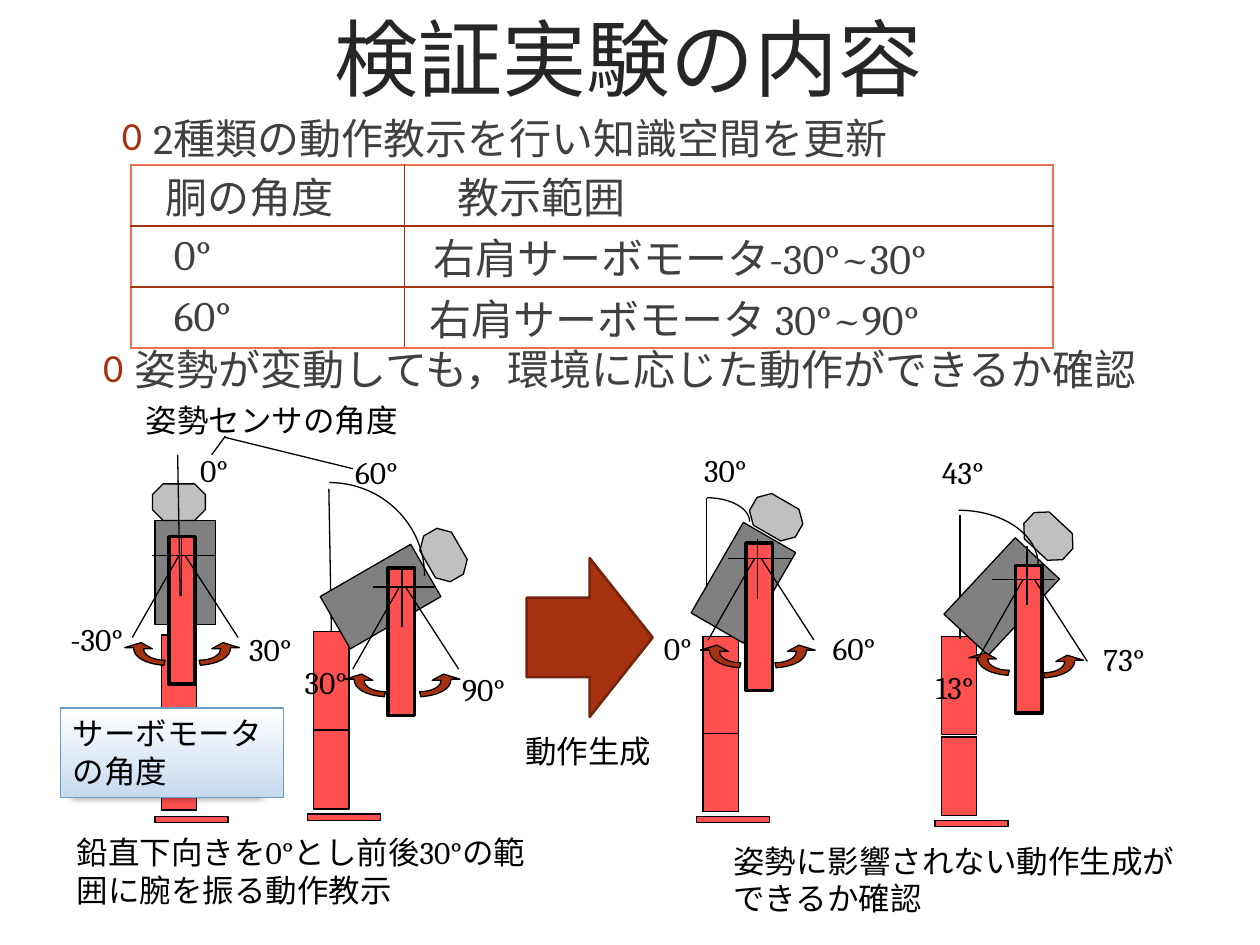
"""Build the slide on the two taught arm motions and the posture check."""
import lxml.etree
import pptx
import pptx.dml.color
import pptx.enum.shapes
import pptx.enum.text
import pptx.oxml
import pptx.oxml.ns
import pptx.util

Inches = pptx.util.Inches
Pt = pptx.util.Pt
color = pptx.dml.color.RGBColor.from_string
SHAPE = pptx.enum.shapes.MSO_SHAPE
ANCHOR = pptx.enum.text.MSO_ANCHOR
ALIGN = pptx.enum.text.PP_ALIGN
qn = pptx.oxml.ns.qn
NAMESPACE = 'xmlns:a="http://schemas.openxmlformats.org/drawingml/2006/main"'
FONT, RUST, RED, BLACK = "Cambria", "A63212", "FF5050", "000000"

presentation = pptx.Presentation()
presentation.slide_width, presentation.slide_height = Inches(10), Inches(7.5)
slide = presentation.slides.add_slide(presentation.slide_layouts[6])


def draw_shape(kind, box, fill=None, line=BLACK, width=0.75, rotation=0):
    shape = slide.shapes.add_shape(kind, *map(Inches, box))
    shape.shadow.inherit = False
    shape.rotation = rotation
    if fill:
        shape.fill.solid()
        shape.fill.fore_color.rgb = color(fill)
    else:
        shape.fill.background()
    shape.line.color.rgb = color(line)
    shape.line.width = Pt(width)
    return shape


def draw_line(*ends):
    connector = slide.shapes.add_connector(
        pptx.enum.shapes.MSO_CONNECTOR.STRAIGHT, *map(Inches, ends))
    connector.line.color.rgb = color(BLACK)
    connector.line.width = Pt(0.75)
    lxml.etree.SubElement(connector._element.spPr, qn("a:effectLst"))


rows = [
    [("胴の角度", 0.27), ("教示範囲", 0.42)],
    [("0°", 0.34), ("右肩サーボモータ-30°~30°", 0.23)],
    [("60°", 0.34), ("右肩サーボモータ 30°~90°", 0.2)],
]
table = slide.shapes.add_table(3, 2, *map(Inches, (1.04, 1.31, 7.32, 1.42))).table
table.first_row = table.horz_banding = False
table.columns[0].width, table.columns[1].width = Inches(2.17), Inches(5.15)
for row, entries in enumerate(rows):
    for column, (words, indent) in enumerate(entries):
        cell = table.cell(row, column)
        cell.fill.background()
        cell.margin_left = Inches(indent)
        cell.margin_right = cell.margin_top = cell.margin_bottom = 0
        cell.vertical_anchor = ANCHOR.MIDDLE
        run = cell.text_frame.paragraphs[0].add_run()
        run.text = words
        run.font.name, run.font.size = FONT, Pt(24)
        run.font.color.rgb = color("404040")
        outer = {"L": column == 0, "R": column == 1, "T": row == 0, "B": row == 2}
        for position, (side, is_outer) in enumerate(outer.items()):
            border, width = ("EC714F", 1.5) if is_outer else (RUST, 0.75)
            cell._tc.get_or_add_tcPr().insert(position, pptx.oxml.parse_xml(
                f'<a:ln{side} {NAMESPACE} w="{Pt(width)}"><a:solidFill>'
                f'<a:srgbClr val="{border}"/></a:solidFill></a:ln{side}>'))

robots = [
    dict(leg=1.28, tops=(5.04, 5.81, 6.48), torso=(1.23, 4.13), head=(1.21, 3.84),
         lean=0, arm=(1.34, 4.26), tips=((0.99, 5.1), (1.9, 5.1)),
         pivot=(4.41, 1.42, 1.47), bar=1.21, post=(1.44, 4.26)),
    dict(leg=2.49, tops=(5.01, 5.8, 6.46), torso=(2.78, 4.32), head=(3.31, 4.26),
         lean=60, arm=(3.08, 4.51), tips=((2.74, 5.35), (3.65, 5.35)),
         pivot=(4.66, 3.17, 3.22), bar=2.96, post=(3.19, 4.51),
         vertical=(2.63, 5.01, 2.61, 3.88), arc=(1.86, 3.83, 1.51, 1.48)),
    dict(leg=5.58, tops=(5.05, 5.82, 6.48), torso=(5.66, 4.21), head=(5.95, 3.96),
         lean=30, arm=(5.92, 4.31), tips=((5.56, 5.12), (6.47, 5.12)),
         pivot=(4.43, 5.99, 6.04), bar=5.78, post=(6.01, 4.28),
         vertical=(5.61, 4.94, 5.61, 3.95), arc=(5.27, 3.95, 0.68, 0.38)),
    dict(leg=7.47, tops=(5.05, 5.85, 6.51), torso=(7.71, 4.32), head=(8.11, 4.11),
         lean=43, arm=(8.06, 4.49), tips=((7.69, 5.18), (8.6, 5.2)),
         pivot=(4.6, 8.12, 8.21), bar=7.87, post=(8.15, 4.33),
         vertical=(7.62, 5.07, 7.62, 4.09), arc=(6.98, 4.05, 1.26, 0.86)),
]
inner_curve = ((0.15, 0.05), (0.15, 0.1), (0.22, 0.14), (0.32, 0.14))
outer_curve = ((0.31, 0.18), (0.17, 0.17), (0.07, 0.12), (0.07, 0.04))
swing = []
for curve in (inner_curve, outer_curve):
    for step in range(9):
        t = step / 8
        weights = ((1 - t) ** 3, 3 * t * (1 - t) ** 2, 3 * t * t * (1 - t), t ** 3)
        swing.append([sum(w * point[axis] for w, point in zip(weights, curve))
                      for axis in (0, 1)])
swing += [(0, 0.04), (0.13, 0), (0.22, 0.05)]

for robot in robots:
    leg, lean = robot["leg"], robot["lean"]
    thigh, shin, foot = robot["tops"]
    draw_shape(SHAPE.RECTANGLE, (leg, thigh, 0.28, 0.78), RED)
    draw_shape(SHAPE.RECTANGLE, (leg, shin, 0.28, 0.62), RED)
    draw_shape(SHAPE.RECTANGLE, (leg - 0.05, foot, 0.58, 0.05), RED)
    if "vertical" in robot:
        draw_line(*robot["vertical"])
    draw_shape(SHAPE.RECTANGLE, (*robot["torso"], 0.48, 0.83), "808080", rotation=lean)
    draw_shape(SHAPE.OCTAGON, (*robot["head"], 0.42, 0.29), "C0C0C0", rotation=lean)
    draw_shape(SHAPE.RECTANGLE, (*robot["arm"], 0.21, 1.17), RED, width=2)
    for direction, (tip, top) in zip((1, -1), robot["tips"]):
        points = [(Inches(tip + direction * x), Inches(top + y)) for x, y in swing]
        builder = slide.shapes.build_freeform(*points[0])
        builder.add_line_segments(points[1:], close=True)
        arrow = builder.convert_to_shape()
        arrow.shadow.inherit = False
        arrow.fill.solid()
        arrow.fill.fore_color.rgb = color(RUST)
        arrow.line.color.rgb = color(BLACK)
        arrow.line.width = Pt(0.75)
    y, left, right = robot["pivot"]
    post, post_top = robot["post"]
    draw_line(right, y, right + 0.42, y + 0.65)
    draw_line(left, y, left - 0.37, y + 0.65)
    draw_line(robot["bar"], y, robot["bar"] + 0.5, y)
    draw_line(post, post_top, post, post_top + 0.47)
    if "arc" in robot:
        draw_shape(SHAPE.ARC, robot["arc"])

draw_line(1.43, 4.73, 1.41, 3.61)
draw_line(1.68, 3.61, 1.79, 3.46)
draw_line(1.78, 3.47, 2.8, 3.72)
draw_shape(SHAPE.RIGHT_ARROW, (4.18, 4.43, 1, 1.26), RUST, "75230C", 1.5)

backing = draw_shape(SHAPE.RECTANGLE, (0.57, 5.68, 1.51, 0.64), "81AAD3", "6B9BC7")
backing._element.spPr.find(qn("a:effectLst")).append(pptx.oxml.parse_xml(
    f'<a:outerShdw {NAMESPACE} blurRad="{Pt(4)}" dist="{Pt(1)}" dir="5400000">'
    '<a:srgbClr val="000000"><a:alpha val="37000"/></a:srgbClr></a:outerShdw>'))
servo_label = draw_shape(SHAPE.RECTANGLE, (0.48, 5.62, 1.77, 0.71), line="6B9BC7")
servo_label.fill.gradient()
servo_label.fill.gradient_angle = 270
for stop, shade in zip(servo_label.fill.gradient_stops, ("FFFFFF", "C6DAEF")):
    stop.color.rgb = color(shade)

texts = [
    ("検証実験の内容", (0.59, -0.34, 8.79, 1.58), 48, "262626"),
    ("2種類の動作教示を行い知識空間を更新", (0.87, 0.84, 8.7, 0.47), 24, "404040"),
    ("姿勢が変動しても，環境に応じた動作ができるか確認", (0.72, 2.68, 8.62, 0.5), 24, "404040"),
    ("サーボモータの角度", servo_label, 18, BLACK),
    ("姿勢センサの角度", (1.06, 3.13, 2.36, 0.4), 18, BLACK),
    ("動作生成", (4.07, 5.76, 1.25, 0.4), 18, BLACK),
    ("鉛直下向きを0°とし前後30°の範囲に腕を振る動作教示", (0.51, 6.56, 3.81, 0.71), 18, BLACK),
    ("姿勢に影響されない動作生成ができるか確認", (5.72, 6.63, 3.71, 0.71), 18, BLACK),
]
angles = [
    ("0°", 1.49, 3.53), ("-30°", 0.46, 4.87), ("30°", 1.88, 4.95),
    ("60°", 2.72, 3.55), ("30°", 2.32, 5.21), ("90°", 3.57, 5.27),
    ("30°", 5.49, 3.53), ("0°", 5.17, 4.94), ("60°", 6.51, 4.94),
    ("43°", 7.38, 3.55), ("13°", 7.33, 5.25), ("73°", 8.66, 5.03),
]
texts += [(words, (x, y, 0.73, 0.4), 18, BLACK) for words, x, y in angles]
for words, place, size, ink in texts:
    shape = place if place is servo_label else slide.shapes.add_textbox(*map(Inches, place))
    frame = shape.text_frame
    frame.word_wrap = True
    frame.vertical_anchor = ANCHOR.MIDDLE if size == 48 else ANCHOR.TOP
    paragraph = frame.paragraphs[0]
    paragraph.alignment = ALIGN.CENTER if size == 48 else ALIGN.LEFT
    if size == 24:
        properties = paragraph._p.get_or_add_pPr()
        properties.set("marL", str(Inches(0.25)))
        properties.set("indent", str(-Inches(0.25)))
        for bullet in (f'<a:buClr {NAMESPACE}><a:srgbClr val="{RUST}"/></a:buClr>',
                       f'<a:buSzPct {NAMESPACE} val="95000"/>',
                       f'<a:buFont {NAMESPACE} typeface="+mj-lt"/>',
                       f'<a:buChar {NAMESPACE} char="0"/>'):
            properties.append(pptx.oxml.parse_xml(bullet))
    run = paragraph.add_run()
    run.text = words
    run.font.name, run.font.size = FONT, Pt(size)
    run.font.color.rgb = color(ink)

presentation.save("out.pptx")
